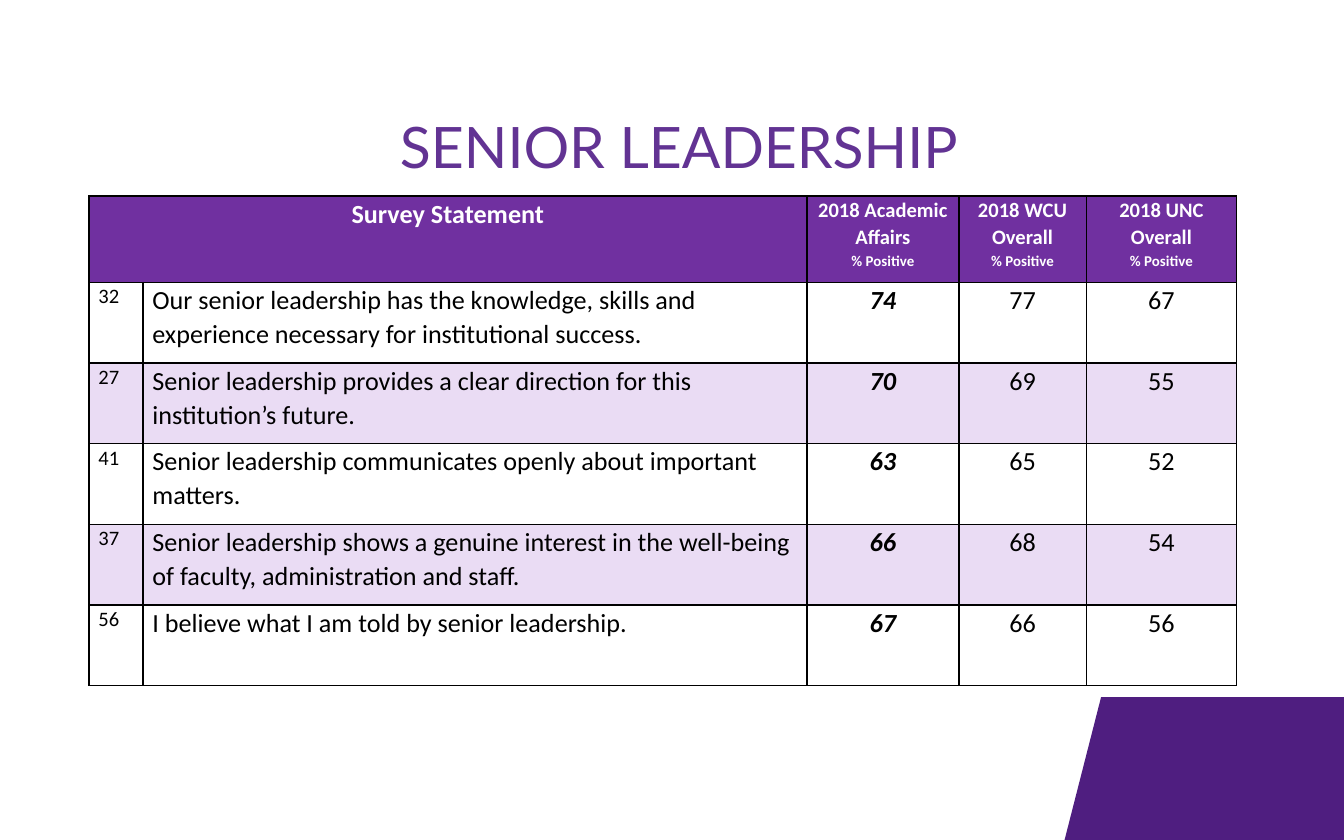
from dataclasses import dataclass

from lxml import etree
from pptx import Presentation
from pptx.dml.color import RGBColor
from pptx.enum.text import MSO_ANCHOR, MSO_AUTO_SIZE, PP_ALIGN
from pptx.oxml.ns import qn
from pptx.util import Cm, Pt

LEFT, CENTER = PP_ALIGN.LEFT, PP_ALIGN.CENTER
TOP, MIDDLE = MSO_ANCHOR.TOP, MSO_ANCHOR.MIDDLE
NO_AUTOFIT = MSO_AUTO_SIZE.NONE
TITLE_ONLY = 5


@dataclass(frozen=True)
class Theme:
    title_font: str = "Lato"
    body_font: str = "Calibri"
    title: str = "623393"
    accent: str = "4F1E80"
    header: str = "7030A0"
    band: str = "EADCF4"
    white: str = "FFFFFF"
    black: str = "000000"
    title_size: float = 30.6
    body_size: float = 14
    label_size: float = 11
    note_size: float = 8
    border: float = 1


THEME = Theme()

GROUPS = ["2018 Academic Affairs", "2018 WCU Overall", "2018 UNC Overall"]
ROWS = [
    (32, "Our senior leadership has the knowledge, skills and experience "
         "necessary for institutional success.", 74, 77, 67),
    (27, "Senior leadership provides a clear direction for this "
         "institution’s future.", 70, 69, 55),
    (41, "Senior leadership communicates openly about important matters.", 63, 65, 52),
    (37, "Senior leadership shows a genuine interest in the well-being of "
         "faculty, administration and staff.", 66, 68, 54),
    (56, "I believe what I am told by senior leadership.", 67, 66, 56),
]
COLUMN_WIDTHS = [1.02, 12.55, 2.87, 2.41, 2.84]
HEADER_HEIGHT = 1.63


def write(p, text, size=THEME.body_size, font=THEME.body_font, color=THEME.black,
          bold=False, italic=False, align=LEFT, spacing=1.07):
    p.alignment = align
    p.line_spacing = spacing
    r = p.add_run()
    r.text = text
    r.font.size = Pt(size)
    r.font.name = font
    r.font.color.rgb = RGBColor.from_string(color)
    r.font.bold = bold
    r.font.italic = italic


def add_border(cell):
    tc_pr = cell._tc.get_or_add_tcPr()
    for side in ("a:lnL", "a:lnR", "a:lnT", "a:lnB"):
        ln = etree.SubElement(tc_pr, qn(side), w=str(Pt(THEME.border)))
        fill = etree.SubElement(ln, qn("a:solidFill"))
        etree.SubElement(fill, qn("a:srgbClr"), val=THEME.black)


def style_cell(cell, color):
    cell.margin_left = cell.margin_right = Cm(0.18)
    cell.margin_top = cell.margin_bottom = 0
    cell.vertical_anchor = TOP
    add_border(cell)
    cell.fill.solid()
    cell.fill.fore_color.rgb = RGBColor.from_string(color)


def add_corner(s, left, top, width, height):
    slant = 0.69
    fb = s.shapes.build_freeform(Cm(left + slant), Cm(top))
    fb.add_line_segments([
        (Cm(left + width), Cm(top)),
        (Cm(left + width), Cm(top + height)),
        (Cm(left), Cm(top + height)),
    ], close=True)
    sp = fb.convert_to_shape()
    sp.shadow.inherit = False
    sp.fill.solid()
    sp.fill.fore_color.rgb = RGBColor.from_string(THEME.accent)
    sp.line.fill.background()


def add_title(s, text, left, top, width, height):
    sp = s.shapes.title
    sp.left, sp.top, sp.width, sp.height = Cm(left), Cm(top), Cm(width), Cm(height)
    tf = sp.text_frame
    tf.word_wrap = True
    tf.auto_size = NO_AUTOFIT
    tf.vertical_anchor = MIDDLE
    write(tf.paragraphs[0], text, size=THEME.title_size, font=THEME.title_font,
          color=THEME.title, align=CENTER, spacing=Pt(30))


def add_header(table):
    style = dict(color=THEME.white, bold=True, align=CENTER)
    for cell in table.rows[0].cells:
        style_cell(cell, THEME.header)
    table.cell(0, 0).merge(table.cell(0, 1))
    write(table.cell(0, 0).text_frame.paragraphs[0], "Survey Statement", **style)
    for col, group in enumerate(GROUPS, start=2):
        tf = table.cell(0, col).text_frame
        write(tf.paragraphs[0], group, size=THEME.label_size, **style)
        write(tf.add_paragraph(), "% Positive", size=THEME.note_size, **style)


def add_survey_table(s, left, top, width, height):
    frame = s.shapes.add_table(len(ROWS) + 1, len(COLUMN_WIDTHS),
                               Cm(left), Cm(top), Cm(width), Cm(height))
    table = frame.table
    for column, column_width in zip(table.columns, COLUMN_WIDTHS):
        column.width = Cm(column_width)
    for row in table.rows:
        row.height = Cm((height - HEADER_HEIGHT) / len(ROWS))
    table.rows[0].height = Cm(HEADER_HEIGHT)
    add_header(table)

    formats = [dict(size=THEME.label_size), {},
               dict(bold=True, italic=True, align=CENTER),
               dict(align=CENTER), dict(align=CENTER)]
    for i, values in enumerate(ROWS, start=1):
        color = THEME.white if i % 2 else THEME.band
        for cell, value, fmt in zip(table.rows[i].cells, values, formats):
            style_cell(cell, color)
            write(cell.text_frame.paragraphs[0], str(value), **fmt)


def main():
    prs = Presentation()
    prs.slide_width, prs.slide_height = Cm(25.4), Cm(15.88)
    s = prs.slides.add_slide(prs.slide_layouts[TITLE_ONLY])
    add_corner(s, 20.12, 13.18, 5.28, 2.7)
    add_title(s, "SENIOR LEADERSHIP", 1.02, 1.42, 23.62, 2.92)
    add_survey_table(s, 1.68, 3.71, sum(COLUMN_WIDTHS), 9.25)
    prs.save("out.pptx")


if __name__ == "__main__":
    main()
